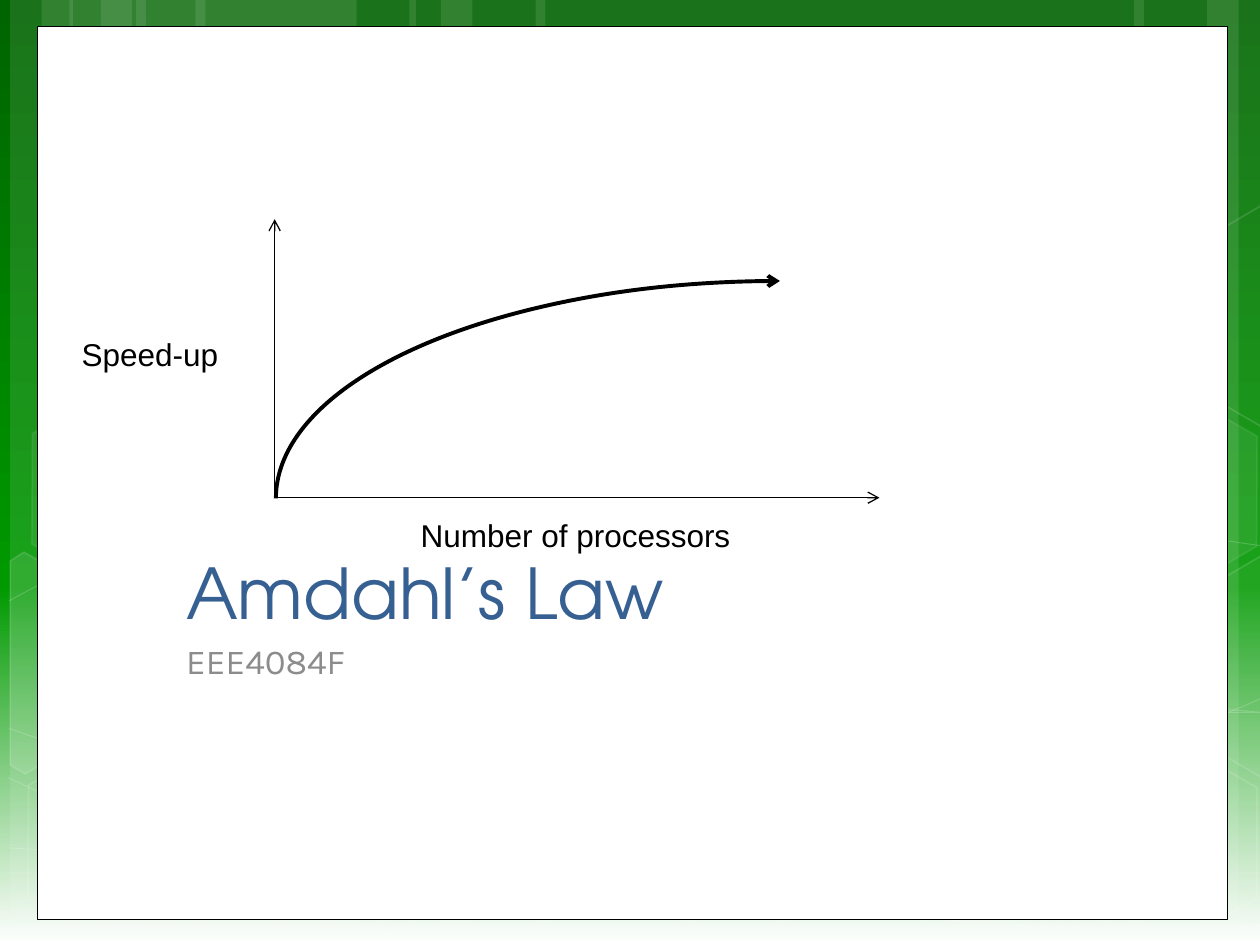
import copy
import math

import pptx
import pptx.dml.color
import pptx.enum.shapes
import pptx.enum.text
import pptx.oxml
import pptx.oxml.ns
import pptx.util

SHAPE = pptx.enum.shapes.MSO_SHAPE
ANCHOR = pptx.enum.text.MSO_ANCHOR
COLUMNS, ROWS = 10, 7.5
SLIDE_WIDTH, SLIDE_HEIGHT = pptx.util.Inches(10), pptx.util.Inches(7.5)
WHITE, BLACK = "FFFFFF", "000000"
TILT = 30

BACKGROUND_STOPS = [(0, "006400"), (0.62, "009900"), (1, WHITE)]

# Full-height bands: left column, width in columns, rotation
BANDS = [
    (1.08, 1.75, 0), (0.08, 0.5, 0), (0.33, 0.83, 0), (1.55, 1.75, 0),
    (0.55, 0.5, 0), (0.8, 0.83, 0), (7.33, 1.75, 180), (9.58, 0.5, 180),
    (9, 0.83, 180), (4.25, 3.08, 0), (3.25, 0.5, 0), (3.5, 0.83, 0),
]

# Sweeping lines: a start point, then three points for each Bezier piece
SWEEPS = [
    [(0.07, 6.73), (0.61, 6.76), (1.15, 6.79), (1.9, 6.78), (2.65, 6.77), (3.58, 6.75),
     (4.58, 6.65), (5.58, 6.55), (7, 6.36), (7.92, 6.17), (8.83, 5.98), (9.77, 5.68),
     (10.07, 5.51)],
    [(0.07, 4.77), (0.36, 4.61), (0.65, 4.46), (1.21, 4.31), (1.78, 4.16), (2.59, 3.94),
     (3.47, 3.87), (4.36, 3.8), (5.44, 3.79), (6.54, 3.87), (7.64, 3.95), (9.47, 4.26),
     (10.07, 4.34)],
    [(0.06, 6.17), (1.27, 6.72), (2.47, 7.27), (3.34, 7.49)],
    [(0.07, 5.78), (0.38, 5.89), (0.7, 6), (1.28, 6.16), (1.86, 6.31), (2.73, 6.56),
     (3.57, 6.73), (4.4, 6.9), (5.45, 7.08), (6.28, 7.18), (7.11, 7.29), (8, 7.33),
     (8.53, 7.36), (9.05, 7.4), (9.19, 7.38), (9.45, 7.38), (9.71, 7.37), (9.89, 7.35),
     (10.07, 7.34)],
    [(2.42, 7.49), (2.6, 7.29), (2.78, 7.09), (3.02, 6.91), (3.26, 6.73), (3.6, 6.53),
     (3.88, 6.39), (4.16, 6.25), (4.33, 6.19), (4.7, 6.09), (5.06, 5.99), (5.73, 5.85),
     (6.08, 5.78), (6.44, 5.71), (6.49, 5.71), (6.8, 5.69), (7.11, 5.66), (7.6, 5.63),
     (7.94, 5.62), (8.29, 5.61), (8.86, 5.62), (8.86, 5.62), (8.86, 5.62), (9.53, 5.62),
     (9.53, 5.62), (9.71, 5.63), (9.88, 5.64), (9.97, 5.65), (10.06, 5.66),
     (10.03, 5.65), (10.06, 5.66)],
]
SWEEPS[-1].pop(22)  # the flat stretch is one piece

# Hexagons: left, top, fill opacity, line opacity (percent)
HEXAGONS = [
    (4.97, 5.89, 6, 12), (0.11, 5.91, None, 12), (0.14, 3.12, 7, 8),
    (1.74, 5.92, None, 12), (8.34, 5.93, None, 12), (8.34, 3.14, 7, 8),
]

# Hexagons cut by the slide's edge: centre, outline, fill opacity
CUT_HEXAGONS = [
    ((0.36, 5.35), [(0.08, 4.45), (0.19, 4.38), (0.96, 4.82), (0.95, 5.7),
                    (0.2, 6.14), (0.08, 6.07)], 10),
    ((9.85, 5.2), [(9.26, 4.85), (10.01, 4.41), (10.09, 4.46), (10.09, 6.13),
                   (10.02, 6.17), (9.26, 5.73)], 4),
    ((9.85, 2.41), [(9.26, 2.07), (10.01, 1.63), (10.1, 1.68), (10.09, 3.35),
                    (10.02, 3.39), (9.26, 2.95)], None),
]


def col(count):
    return round(SLIDE_WIDTH * count / COLUMNS)


def row(count):
    return round(SLIDE_HEIGHT * count / ROWS)


def add_xml(parent, tag, **attributes):
    child = pptx.oxml.parse_xml(f"<{tag} {pptx.oxml.ns.nsdecls('a')}/>")
    for name, value in attributes.items():
        child.set(name, value)
    parent.append(child)
    return child


def paint(fill, color, opacity=100):
    """Fill with a hex colour; an opacity of None leaves the area empty."""
    if opacity is None:
        fill.background()
        return
    fill.solid()
    fill.fore_color.rgb = pptx.dml.color.RGBColor.from_string(color)
    if opacity < 100:
        rgb = fill._xPr.find(".//" + pptx.oxml.ns.qn("a:srgbClr"))
        add_xml(rgb, "a:alpha", val=str(opacity * 1000))


def draw_line(part, color, width, opacity=100, arrow_end=None):
    part.line.width = pptx.util.Pt(width)
    paint(part.line.fill, color, opacity)
    if arrow_end:
        add_xml(part.line._get_or_add_ln(), f"a:{arrow_end}", type="arrow")


def add_preset(slide, preset, left, top, width, height):
    part = slide.shapes.add_shape(preset, col(left), row(top), col(width), row(height))
    part.shadow.inherit = False
    return part


def add_outline(slide, points, close):
    corners = [(col(x), row(y)) for x, y in points]
    builder = slide.shapes.build_freeform(*corners[0])
    builder.add_line_segments(corners[1:], close=close)
    part = builder.convert_to_shape()
    part.shadow.inherit = False
    return part


def bend(outline):
    """Turn each three straight segments into one Bezier piece."""
    segments = list(outline._element.iter(pptx.oxml.ns.qn("a:lnTo")))
    track = segments[0].getparent()
    for first in range(0, len(segments), 3):
        piece = add_xml(track, "a:cubicBezTo")
        for segment in segments[first:first + 3]:
            piece.append(segment[0])
            track.remove(segment)


def turn_back(points, centre):
    cos, sin = math.cos(math.radians(TILT)), math.sin(math.radians(TILT))
    offsets = [(x - centre[0], y - centre[1]) for x, y in points]
    return [(centre[0] + x * cos + y * sin, centre[1] + y * cos - x * sin)
            for x, y in offsets]


def add_axis(slide, start, end):
    axis = slide.shapes.add_connector(
        pptx.enum.shapes.MSO_CONNECTOR.STRAIGHT,
        col(start[0]), row(start[1]), col(end[0]), row(end[1]))
    draw_line(axis, BLACK, 0.75, arrow_end="tailEnd")
    add_xml(axis._element.spPr, "a:effectLst")


def add_text(slide, words, box, font, color, frame, space_before=0):
    left, top, width, height = box
    text_frame = slide.shapes.add_textbox(
        col(left), row(top), col(width), row(height)).text_frame
    paragraph = text_frame.paragraphs[0]
    paragraph.space_before = pptx.util.Pt(space_before)
    run = paragraph.add_run()
    run.text = words
    for target, values in ((text_frame, frame), (run.font, font)):
        for name, value in values.items():
            setattr(target, name, value)
    run.font.color.rgb = pptx.dml.color.RGBColor.from_string(color)


def add_background(slide):
    fill = slide.background.fill
    fill.gradient()
    fill.gradient_angle = 270
    last = fill.gradient_stops[-1]._gs
    last.addprevious(copy.deepcopy(last))
    for stop, (position, color) in zip(fill.gradient_stops, BACKGROUND_STOPS):
        stop.position = position
        stop.color.rgb = pptx.dml.color.RGBColor.from_string(color)


def add_decoration(slide):
    for left, width, rotation in BANDS:
        band = add_preset(slide, SHAPE.RECTANGLE, left, 0, width, ROWS)
        band.rotation = rotation
        paint(band.fill, WHITE, 10)
        band.line.fill.background()
    for controls in SWEEPS:
        sweep = add_outline(slide, controls, close=False)
        bend(sweep)
        sweep.fill.background()
        draw_line(sweep, WHITE, 0.5, 20)
    for left, top, fill_opacity, line_opacity in HEXAGONS:
        hexagon = add_preset(slide, SHAPE.HEXAGON, left, top, 1.75, 1.52)
        hexagon.adjustments[0] = 0.285
        hexagon.rotation = TILT
        paint(hexagon.fill, WHITE, fill_opacity)
        draw_line(hexagon, WHITE, 1, line_opacity)
    for centre, corners, fill_opacity in CUT_HEXAGONS:
        cut_hexagon = add_outline(slide, turn_back(corners, centre), close=True)
        cut_hexagon.rotation = TILT
        paint(cut_hexagon.fill, WHITE, fill_opacity)
        draw_line(cut_hexagon, WHITE, 1, 12)


def add_speedup_graph(slide):
    curve = add_preset(slide, SHAPE.ARC, 2.19, 2.23, 8, 3.45)
    curve._element.spPr.xfrm.set("flipH", "1")
    curve.fill.background()
    draw_line(curve, BLACK, 2.25, arrow_end="headEnd")
    add_axis(slide, (2.18, 3.95), (2.18, 1.74))
    add_axis(slide, (2.19, 3.95), (6.98, 3.95))
    label_font = {"name": "Arial", "size": pptx.util.Pt(18)}
    label_frame = {"word_wrap": False,
                   "auto_size": pptx.enum.text.MSO_AUTO_SIZE.SHAPE_TO_FIT_TEXT}
    for words, box in [("Speed-up", (0.55, 2.61, 1.3, 0.4)),
                       ("Number of processors", (3.24, 4.05, 2.68, 0.4))]:
        add_text(slide, words, box, label_font, BLACK, label_frame)


def main():
    deck = pptx.Presentation()
    deck.slide_width, deck.slide_height = SLIDE_WIDTH, SLIDE_HEIGHT
    slide = deck.slides.add_slide(deck.slide_layouts[6])
    # Green surroundings and white panel
    add_background(slide)
    add_decoration(slide)
    panel = add_preset(slide, SHAPE.RECTANGLE, 0.3, 0.21, 9.44, 7.09)
    paint(panel.fill, WHITE)
    draw_line(panel, BLACK, 0.5)
    # Title and course code
    add_text(slide, "Amdahl’s Law", (1.38, 3.59, 7.26, 1.49),
             {"name": "TeX Gyre Adventor", "size": pptx.util.Pt(40)}, "376092",
             {"word_wrap": True, "vertical_anchor": ANCHOR.BOTTOM})
    add_text(slide, "EEE4084F", (1.38, 5.03, 7.26, 1.66),
             {"name": "Karla", "size": pptx.util.Pt(20)}, "8C8C8C",
             {"word_wrap": True, "vertical_anchor": ANCHOR.TOP}, space_before=4)
    # Speed-up against number of processors
    add_speedup_graph(slide)
    deck.save("out.pptx")


if __name__ == "__main__":
    main()
